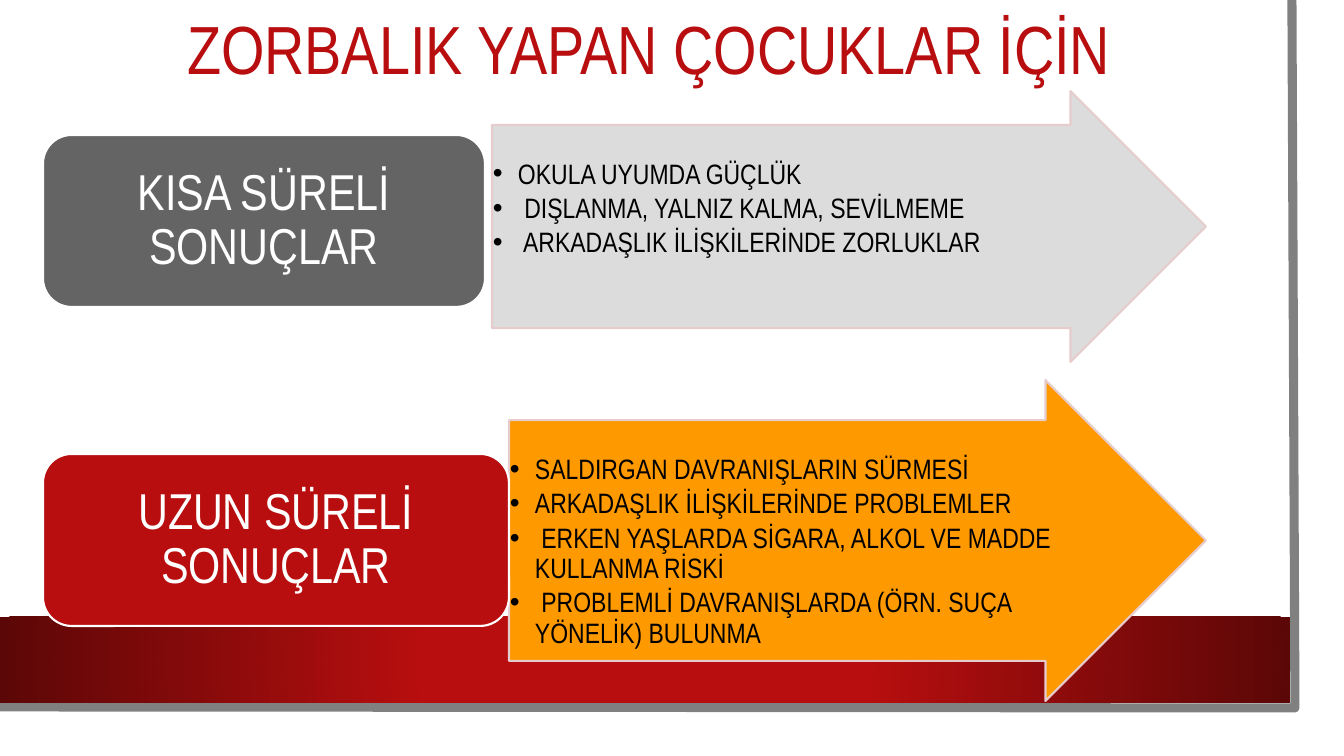
from lxml import etree
from pptx import Presentation
from pptx.dml.color import RGBColor
from pptx.enum.shapes import MSO_SHAPE
from pptx.enum.text import MSO_ANCHOR, PP_ALIGN
from pptx.oxml.ns import qn
from pptx.util import Pt

TOP, MIDDLE = MSO_ANCHOR.TOP, MSO_ANCHOR.MIDDLE
LEFT, CENTER = PP_ALIGN.LEFT, PP_ALIGN.CENTER
RECT, ROUND, ARROW = MSO_SHAPE.RECTANGLE, MSO_SHAPE.ROUNDED_RECTANGLE, MSO_SHAPE.RIGHT_ARROW

TITLE = "ZORBALIK YAPAN ÇOCUKLAR İÇİN"
ROWS = [
    dict(label="KISA SÜRELİ SONUÇLAR", label_box=(43, 135, 442, 172), label_fill="grey",
         arrow_box=(492, 91, 714, 271), arrow_fill="light",
         points=["OKULA UYUMDA GÜÇLÜK",
                 " DIŞLANMA, YALNIZ KALMA, SEVİLMEME",
                 " ARKADAŞLIK İLİŞKİLERİNDE ZORLUKLAR"]),
    dict(label="UZUN SÜRELİ SONUÇLAR", label_box=(43, 454, 466, 172), label_fill="red",
         arrow_box=(509, 380, 697, 321), arrow_fill="orange",
         points=["SALDIRGAN DAVRANIŞLARIN SÜRMESİ",
                 "ARKADAŞLIK İLİŞKİLERİNDE PROBLEMLER",
                 " ERKEN YAŞLARDA SİGARA, ALKOL VE MADDE KULLANMA RİSKİ",
                 " PROBLEMLİ DAVRANIŞLARDA (ÖRN. SUÇA YÖNELİK) BULUNMA"]),
]
COLORS = dict(red="B80E0F", dark="5C0707", grey="646464", light="DCDCDC", orange="FF9900",
              pink="E6CCCC", edge="808080", white="FFFFFF", black="000000")
FONT = "Arial Narrow"
PX = 914400 / 100.8


def px(n):
    return round(n * PX)


def rgb(name):
    return RGBColor.from_string(COLORS[name])


def add_box(s, kind, box, fill, line):
    sp = s.shapes.add_shape(kind, *map(px, box))
    sp.shadow.inherit = False
    sp.fill.solid()
    sp.fill.fore_color.rgb = rgb(fill)
    sp.line.color.rgb = rgb(line)
    sp.line.width = Pt(1.5)
    return sp


def set_frame(tf, anchor, insets):
    tf.word_wrap = True
    tf.vertical_anchor = anchor
    tf.margin_left, tf.margin_top, tf.margin_right, tf.margin_bottom = map(px, insets)


def add_text(p, text, size, color, align):
    p.alignment = align
    p.line_spacing = 0.9
    r = p.add_run()
    r.text = text
    r.font.name = FONT
    r.font.size = Pt(size)
    r.font.color.rgb = rgb(color)


def add_bullet(p):
    p.space_after = Pt(3)
    pPr = p._p.get_or_add_pPr()
    pPr.set("marL", str(px(25)))
    pPr.set("indent", str(px(-25)))
    etree.SubElement(pPr, qn("a:buFont")).set("typeface", "Arial")
    etree.SubElement(pPr, qn("a:buChar")).set("char", "•")


def add_page_edge(s):
    fb = s.shapes.build_freeform(px(1292), 0)
    fb.add_line_segments([(px(1295), px(708)), (0, px(707))], close=False)
    sp = fb.convert_to_shape()
    sp.shadow.inherit = False
    sp.fill.background()
    sp.line.color.rgb = rgb("edge")
    sp.line.width = Pt(6.5)


def add_band(s):
    sp = s.shapes.add_shape(RECT, 0, px(617), px(1290), px(86))
    sp.shadow.inherit = False
    sp.line.fill.background()
    sp.fill.gradient()
    for stop, (pos, color) in zip(sp.fill.gradient_stops, [(0.34, "red"), (1, "dark")]):
        stop.position = pos
        stop.color.rgb = rgb(color)
    grad = sp._element.spPr.find(qn("a:gradFill"))
    grad.remove(grad.find(qn("a:lin")))
    radial = etree.SubElement(grad, qn("a:path"))
    radial.set("path", "circle")
    center = etree.SubElement(radial, qn("a:fillToRect"))
    for side in "ltrb":
        center.set(side, "50000")


def add_row(s, row):
    arrow = add_box(s, ARROW, row["arrow_box"], row["arrow_fill"], "pink")
    arrow.adjustments[0], arrow.adjustments[1] = 0.75, 0.5
    tf = arrow.text_frame
    set_frame(tf, TOP, (1, 35, 1, 1))
    for i, point in enumerate(row["points"]):
        p = tf.paragraphs[0] if i == 0 else tf.add_paragraph()
        add_text(p, point, 20, "black", LEFT)
        add_bullet(p)
    label = add_box(s, ROUND, row["label_box"], row["label_fill"], "white")
    set_frame(label.text_frame, MIDDLE, (15, 7, 15, 7))
    add_text(label.text_frame.paragraphs[0], row["label"], 36, "white", CENTER)


def main():
    prs = Presentation()
    prs.slide_width, prs.slide_height = px(1344), px(756)
    s = prs.slides.add_slide(prs.slide_layouts[6])
    add_page_edge(s)
    add_band(s)
    title = s.shapes.add_textbox(px(76), px(14), px(1146), px(77))
    set_frame(title.text_frame, MIDDLE, (10, 5, 10, 5))
    add_text(title.text_frame.paragraphs[0], TITLE, 48.6, "red", CENTER)
    for row in ROWS:
        add_row(s, row)
    prs.save("out.pptx")


if __name__ == "__main__":
    main()
